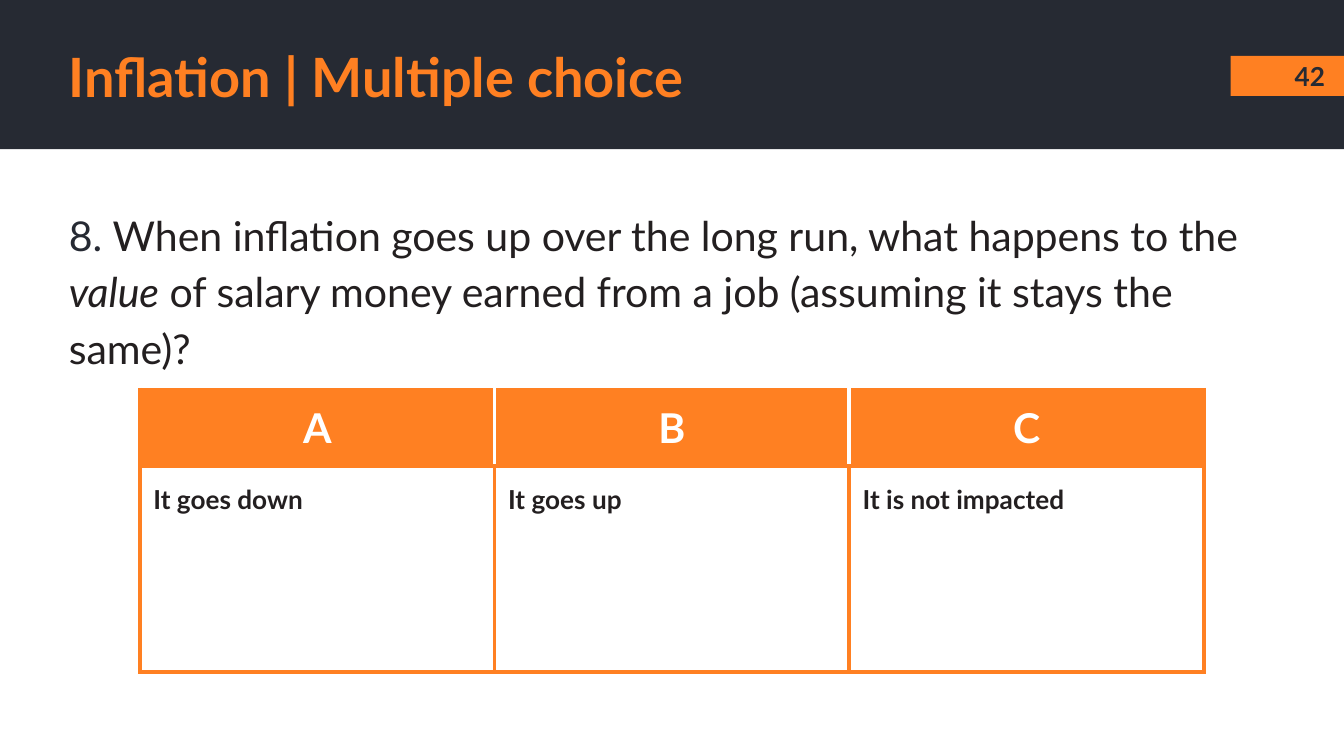
import pptx
import pptx.util
import pptx.dml.color
import pptx.enum.shapes
import pptx.enum.text
import pptx.oxml
import pptx.oxml.ns

Pt = pptx.util.Pt
RGB = pptx.dml.color.RGBColor
Align = pptx.enum.text.PP_ALIGN
Anchor = pptx.enum.text.MSO_ANCHOR

DARK = RGB(0x26, 0x2A, 0x33)
ORANGE = RGB(0xFF, 0x80, 0x22)
INK = RGB(0x23, 0x1F, 0x20)
WHITE = RGB(0xFF, 0xFF, 0xFF)
PAD = Pt(7.2)


class Deck:
    font = "Lato"

    def __init__(self, show):
        self.slide = show.slides.add_slide(show.slide_layouts[6])

    def style(self, run, size, color, bold=False, italic=False):
        font = run.font
        font.name, font.size, font.bold, font.italic = self.font, Pt(size), bold, italic
        font.color.rgb = color

    def bar(self, x, y, w, h, color):
        kind = pptx.enum.shapes.MSO_SHAPE.RECTANGLE
        shape = self.slide.shapes.add_shape(kind, Pt(x), Pt(y), Pt(w), Pt(h))
        shape.shadow.inherit = False
        shape.fill.solid()
        shape.fill.fore_color.rgb = color
        shape.line.fill.background()

    def text(self, x, y, w, h, parts, size, bold=False, align=Align.LEFT,
             anchor=Anchor.MIDDLE, space=1.0):
        """Each part is (words, color, italic)."""
        box = self.slide.shapes.add_textbox(Pt(x), Pt(y), Pt(w), Pt(h))
        frame = box.text_frame
        frame.word_wrap = True
        frame.vertical_anchor = anchor
        frame.margin_left = frame.margin_right = PAD
        frame.margin_top = frame.margin_bottom = PAD
        para = frame.paragraphs[0]
        para.alignment, para.line_spacing = align, space
        for words, color, italic in parts:
            run = para.add_run()
            run.text = words
            self.style(run, size, color, bold, italic)

    def border(self, cell, sides):
        props = cell._tc.get_or_add_tcPr()
        for i, (side, color) in enumerate(sides.items()):
            line = pptx.oxml.parse_xml(
                f'<a:ln{side} {pptx.oxml.ns.nsdecls("a")} w="{Pt(2.25)}">'
                f'<a:solidFill><a:srgbClr val="{color}"/></a:solidFill></a:ln{side}>')
            props.insert(i, line)

    def cell(self, cell, words, size, color, fill, align, space):
        cell.text_frame.text = words
        cell.margin_left = cell.margin_right = PAD
        cell.margin_top = cell.margin_bottom = PAD
        if fill is None:
            cell.fill.background()
        else:
            cell.fill.solid()
            cell.fill.fore_color.rgb = fill
        para = cell.text_frame.paragraphs[0]
        para.alignment, para.line_spacing = align, space
        self.style(para.runs[0], size, color, bold=True)

    def table(self, x, y, wide, highs, heads, items):
        count = len(heads)
        frame = self.slide.shapes.add_table(
            2, count, Pt(x), Pt(y), Pt(wide * count), Pt(sum(highs)))
        table = frame.table
        table.first_row = table.horz_banding = False
        for row, high in zip(table.rows, highs):
            row.height = Pt(high)
        for i, (head, item) in enumerate(zip(heads, items)):
            table.columns[i].width = Pt(wide)
            top, low = table.cell(0, i), table.cell(1, i)
            self.cell(top, head, 22, WHITE, ORANGE, Align.CENTER, 1.0)
            self.cell(low, item, 14, INK, None, Align.LEFT, 1.15)
            # White lines part the header cells
            sides = dict.fromkeys("LRTB", ORANGE)
            self.border(low, sides)
            if i > 0:
                sides["L"] = WHITE
            if i < count - 1:
                sides["R"] = WHITE
            self.border(top, sides)


def main():
    show = pptx.Presentation()
    show.slide_width, show.slide_height = Pt(720), Pt(405)
    deck = Deck(show)

    # Header band and page tab
    deck.bar(0, 0, 720, 80, DARK)
    deck.bar(659.3, 30, 60.7, 21.5, ORANGE)

    # Question
    deck.text(29.8, 101.5, 653, 198.7, [
        ("8. ", DARK, False),
        ("When inflation goes up over the long run, what happens to the ", INK, False),
        ("value", INK, True),
        (" of salary money earned from a job (assuming it stays the same)?", INK, False),
    ], 22, anchor=Anchor.TOP, space=1.15)

    # Title and page number
    deck.text(29.8, 20.5, 629, 40, [("Inflation | Multiple choice", ORANGE, False)],
              29, bold=True)
    deck.text(683, 32, 37.4, 18, [("42", DARK, False)], 14, bold=True,
              align=Align.CENTER)

    # Answers
    deck.table(75, 208.8, 190, (40.6, 110.4), "ABC",
               ("It goes down", "It goes up", "It is not impacted"))

    show.save("out.pptx")


if __name__ == "__main__":
    main()
